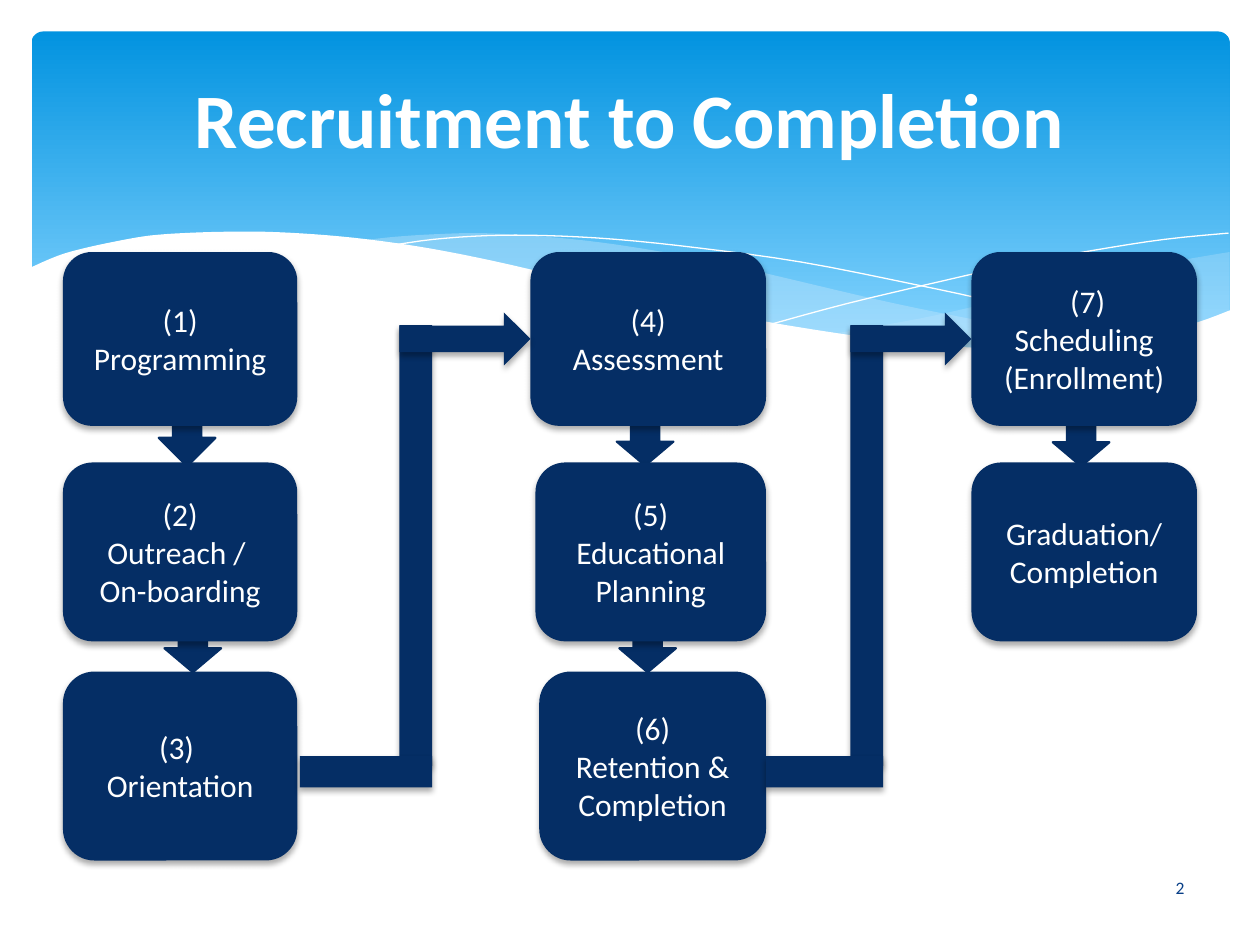
from dataclasses import dataclass

from lxml.etree import SubElement
from pptx import Presentation
from pptx.dml.color import RGBColor
from pptx.enum.shapes import MSO_SHAPE
from pptx.enum.text import MSO_ANCHOR, PP_ALIGN
from pptx.oxml.ns import qn
from pptx.util import Inches, Pt

# The slide is a grid of 100 columns by 75 rows, each cell 0.1 inch square.
GRID_COLUMNS, GRID_ROWS = 100, 75
NAVY, WHITE = "052E65", "FFFFFF"
FONT = "Calibri"

Point = tuple[float, float]


@dataclass(frozen=True)
class Span:
    start: float
    size: float

    @property
    def end(self) -> float:
        return self.start + self.size


@dataclass(frozen=True)
class Wave:
    edges: tuple[tuple[Point, ...], ...]
    opacity: int = 100
    color: str = "C6E7FC"
    outline_only: bool = False


@dataclass(frozen=True)
class Step:
    column: int
    row: int
    lines: tuple[str, ...]
    indent: float = 0


@dataclass(frozen=True)
class DownArrow:
    center: Point
    length: float = 3.8


@dataclass(frozen=True)
class Elbow:
    """A path that leaves one column at the bottom and enters the next at the top."""
    start: float
    post: float
    tip: float


COLUMNS = (Span(5, 18.6), Span(42.1, 18.7), Span(77.1, 17.9))
ROWS = (Span(20, 13.8), Span(36.7, 14.2), Span(53.3, 15))

STEPS = (
    Step(0, 0, ("(1)", "Programming")),
    Step(0, 1, ("(2)", "Outreach / ", "On-boarding")),
    Step(0, 2, ("(3) ", "Orientation")),
    Step(1, 0, ("(4)", "Assessment")),
    Step(1, 1, ("(5)", "Educational Planning"), indent=0.4),
    Step(1, 2, ("(6)", "Retention &", "Completion"), indent=0.7),
    Step(2, 0, (" (7)", "Scheduling", "(Enrollment)")),
    Step(2, 1, ("Graduation/ Completion",)),
)
DOWN_ARROWS = (
    DownArrow((14.85, 34.75), length=4.5), DownArrow((15.3, 51.45)),
    DownArrow((51.2, 35.05)), DownArrow((51.4, 51.45)),
    DownArrow((85.8, 35.1)),
)
ELBOWS = (Elbow(23.8, 31.7, COLUMNS[1].start), Elbow(COLUMNS[1].end, 67.5, COLUMNS[2].start))

WAVES = (
    Wave((
        ((97.6, 20), (93.5, 20.7), (89.1, 21.6), (83.2, 23), (77.9, 24.2), (72.9, 25.3), (66.1, 26.5)),
        ((66.1, 26.5), (70.5, 27.1), (75.7, 27.6), (81.4, 27.8), (87.2, 27.4), (92.1, 26.5),
         (94.9, 25.7), (97.6, 24.7)),
    ), opacity=29),
    Wave((
        ((89.3, 27.3), (83.7, 26.5), (77.5, 25.4), (70.6, 24), (62.9, 22.2), (56.9, 20.8), (51.4, 19.8),
         (46.5, 19.1), (42, 18.7), (38, 18.5), (34.4, 18.6), (31.3, 18.8), (28.6, 19.1)),
        ((28.6, 19.1), (34.2, 19.9), (40.4, 21.1), (44.9, 22.2), (53, 24), (60.1, 25.5), (66.5, 26.6),
         (72.2, 27.4), (77.3, 27.7), (81.8, 27.8), (85.7, 27.7), (89.3, 27.3)),
    ), opacity=40),
    Wave((
        ((30.9, 19.5), (34.4, 19), (38.7, 18.7), (43.3, 18.7), (48.9, 19), (55.6, 19.7), (63.6, 20.8),
         (72.7, 22.6), (79.5, 24.1), (86.9, 26.1), (90.7, 27.2)),
    ), color=WHITE, outline_only=True),
    Wave((
        ((61.3, 25.7), (67.2, 24.1), (74.8, 22.3), (80.6, 21), (86.6, 19.9), (92.4, 19), (97.5, 18.5)),
    ), color=WHITE, outline_only=True),
    Wave((
        ((97.7, 24.6), (95, 25.6), (91, 26.7), (86.3, 27.4), (80.9, 27.7), (74.4, 27.4), (66.8, 26.5),
         (57.9, 25), (50.3, 23.3), (44.7, 22), (39.1, 20.7), (34, 19.7), (29.2, 19), (25, 18.6),
         (21.1, 18.4), (17.7, 18.4), (14.6, 18.5), (11.9, 18.7), (9.5, 19.1), (6.7, 19.7), (4.6, 20.3),
         (2.3, 21.3)),
        ((2.3, 32.9), (97.7, 32.9)),
    ), color=WHITE),
)


def across(columns: float) -> int:
    return round(Inches(10) * columns / GRID_COLUMNS)


def down(rows: float) -> int:
    return round(Inches(7.5) * rows / GRID_ROWS)


def color_of(value: str) -> RGBColor:
    return RGBColor.from_string(value)


def smooth_curve(points: tuple[Point, ...], pieces: int = 4) -> list[Point]:
    """Catmull-Rom interpolation through the given points."""
    padded = (points[0], *points, points[-1])
    curve = [points[0]]
    for a, b, c, d in zip(padded, padded[1:], padded[2:], padded[3:]):
        for piece in range(1, pieces + 1):
            t = piece / pieces
            curve.append(tuple(
                0.5 * (2 * q + (r - p) * t + (2 * p - 5 * q + 4 * r - s) * t**2
                       + (3 * q - p - 3 * r + s) * t**3)
                for p, q, r, s in zip(a, b, c, d)))
    return curve


def add_shadow(shape) -> None:
    effects = shape._element.spPr.find(qn("a:effectLst"))
    shadow = SubElement(effects, qn("a:outerShdw"), blurRad=str(Pt(3.5)), dist=str(Pt(2.2)),
                        dir="5400000", rotWithShape="0")
    color = SubElement(shadow, qn("a:srgbClr"), val="000000")
    SubElement(color, qn("a:alpha"), val="32000")


def add_block(slide, kind, horizontal: Span, vertical: Span, shadowed: bool = True):
    shape = slide.shapes.add_shape(kind, across(horizontal.start), down(vertical.start),
                                   across(horizontal.size), down(vertical.size))
    shape.shadow.inherit = False
    shape.fill.solid()
    shape.fill.fore_color.rgb = color_of(NAVY)
    shape.line.fill.background()
    if shadowed:
        add_shadow(shape)
    return shape


def write_lines(text_frame, lines: tuple[str, ...], size: float, color: str, bold: bool = False) -> None:
    text_frame.word_wrap = True
    text_frame.vertical_anchor = MSO_ANCHOR.MIDDLE
    text_frame.text = "\n".join(lines)
    for paragraph in text_frame.paragraphs:
        paragraph.alignment = PP_ALIGN.CENTER
        paragraph.font.name, paragraph.font.size, paragraph.font.bold = FONT, Pt(size), bold
        paragraph.font.color.rgb = color_of(color)


def draw_banner(slide) -> None:
    banner = add_block(slide, MSO_SHAPE.ROUNDED_RECTANGLE, Span(2.5, 95.1), Span(2.5, 27), shadowed=False)
    banner.adjustments[0] = 0.034
    banner.fill.gradient()
    banner.fill.gradient_angle = 270
    for stop, position, color in zip(banner.fill.gradient_stops, (0, 0.9), ("0293E0", "83D3FE")):
        stop.position, stop.color.rgb = position, color_of(color)


def draw_wave(slide, wave: Wave) -> None:
    points = [(across(x), down(y)) for edge in wave.edges for x, y in smooth_curve(edge)]
    builder = slide.shapes.build_freeform(*points[0])
    builder.add_line_segments(points[1:], close=not wave.outline_only)
    shape = builder.convert_to_shape()
    shape.shadow.inherit = False
    if wave.outline_only:
        shape.fill.background()
        shape.line.color.rgb = color_of(wave.color)
        shape.line.width = Pt(0)
        return
    shape.fill.solid()
    shape.fill.fore_color.rgb = color_of(wave.color)
    shape.line.fill.background()
    color = shape._element.spPr.find(qn("a:solidFill")).find(qn("a:srgbClr"))
    SubElement(color, qn("a:alpha"), val=str(wave.opacity * 1000))


def draw_down_arrow(slide, arrow: DownArrow, breadth: float = 4.5) -> None:
    x, y = arrow.center
    shape = add_block(slide, MSO_SHAPE.RIGHT_ARROW, Span(x - arrow.length / 2, arrow.length),
                      Span(y - breadth / 2, breadth), shadowed=False)
    shape.rotation = 90
    shape.line.color.rgb = color_of(NAVY)
    shape.line.width = Pt(1.25)


def draw_step(slide, step: Step) -> None:
    column = COLUMNS[step.column]
    box = add_block(slide, MSO_SHAPE.ROUNDED_RECTANGLE,
                    Span(column.start + step.indent, column.size - step.indent), ROWS[step.row])
    write_lines(box.text_frame, step.lines, 18, WHITE)


def draw_elbow(slide, elbow: Elbow, thickness: float = 2.6) -> None:
    add_block(slide, MSO_SHAPE.RECTANGLE, Span(elbow.post, thickness), Span(25.8, 35))
    add_block(slide, MSO_SHAPE.RECTANGLE,
              Span(elbow.start, elbow.post + thickness - elbow.start), Span(60, 2.5))
    add_block(slide, MSO_SHAPE.RIGHT_ARROW, Span(elbow.post, elbow.tip - elbow.post), Span(24.8, 4.2))


def main() -> None:
    presentation = Presentation()
    presentation.slide_width, presentation.slide_height = Inches(10), Inches(7.5)
    slide = presentation.slides.add_slide(presentation.slide_layouts[5])

    draw_banner(slide)
    for wave in WAVES:
        draw_wave(slide, wave)

    title = slide.shapes.title
    title.left, title.top, title.width, title.height = across(5), down(2.5), across(90), down(13.7)
    write_lines(title.text_frame, ("Recruitment to Completion",), 44, WHITE, bold=True)
    slide.shapes._spTree.append(title._element)  # in front of the banner

    for arrow in DOWN_ARROWS:
        draw_down_arrow(slide, arrow)
    for step in STEPS:
        draw_step(slide, step)
    for elbow in ELBOWS:
        draw_elbow(slide, elbow)

    number = slide.shapes.add_textbox(across(87.3), down(68.4), across(12.7), down(4))
    write_lines(number.text_frame, ("2",), 10, "073E87")
    presentation.save("out.pptx")


if __name__ == "__main__":
    main()
